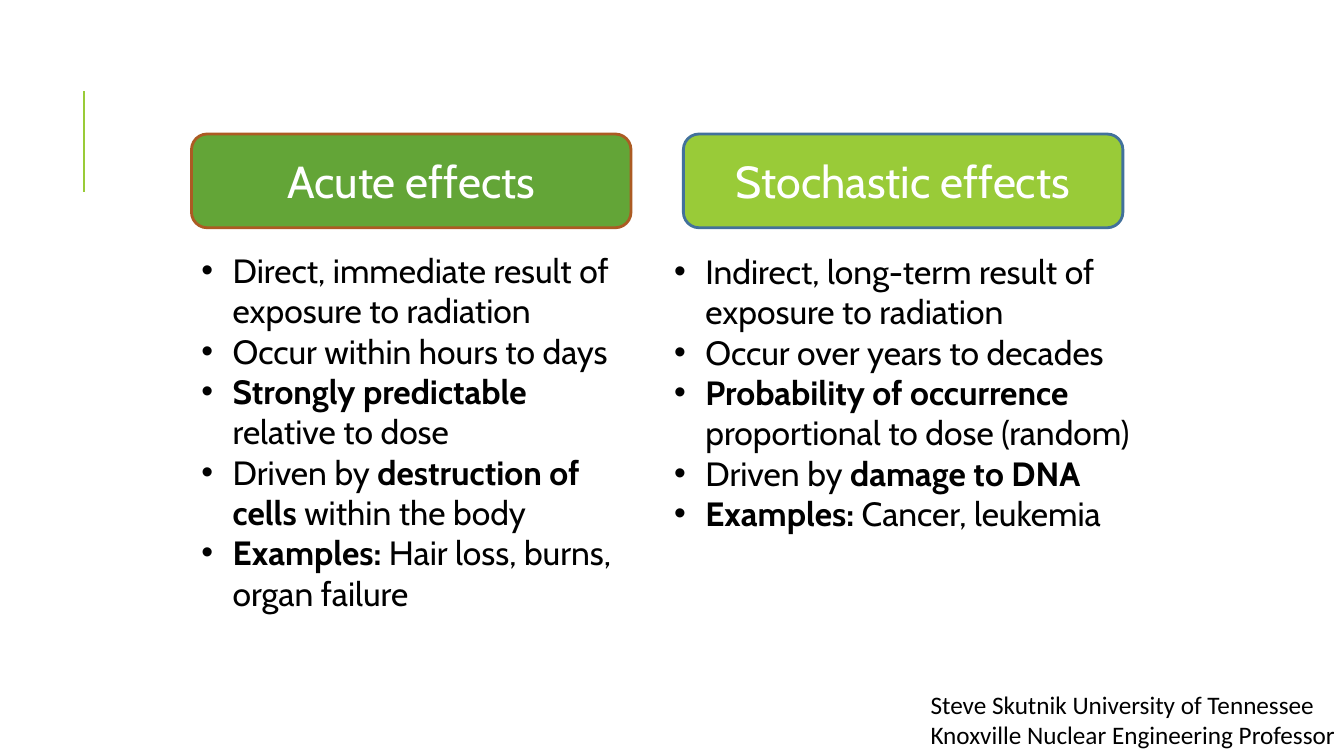
from dataclasses import dataclass

from lxml.etree import SubElement
from pptx import Presentation
from pptx.dml.color import RGBColor as RGB
from pptx.enum.shapes import MSO_CONNECTOR as CONN, MSO_SHAPE as SHAPE
from pptx.enum.text import MSO_ANCHOR as ANCHOR, MSO_AUTO_SIZE as FIT, PP_ALIGN as ALIGN
from pptx.oxml.ns import qn
from pptx.util import Inches, Pt


@dataclass(frozen=True)
class Theme:
    black: RGB = RGB.from_string("000000")
    white: RGB = RGB.from_string("FFFFFF")
    green: RGB = RGB.from_string("63A537")
    lime: RGB = RGB.from_string("99CB38")
    rust: RGB = RGB.from_string("AC5B23")
    blue: RGB = RGB.from_string("42719B")
    body_font: str = "Cabin"
    credit_font: str = "Calibri"
    heading_size: int = 32
    body_size: int = 24
    credit_size: int = 18
    accent_width: float = 1.5
    outline_width: float = 2
    bullet_indent: float = 0.31


def apply(target, values):
    for name, value in values.items():
        setattr(target, name, value)


class Deck:
    COLS, ROWS = 40, 30

    def __init__(self, theme):
        self.theme = theme
        self.prs = Presentation()
        apply(self.prs, {"slide_width": Inches(13.33), "slide_height": Inches(7.5)})
        self.slide = self.prs.slides.add_slide(self.prs.slide_layouts[6])

    def x(self, cols):
        return round(self.prs.slide_width * cols / self.COLS)

    def y(self, rows):
        return round(self.prs.slide_height * rows / self.ROWS)

    def box(self, left, top, width, height):
        return self.x(left), self.y(top), self.x(width), self.y(height)

    def run(self, p, text, font, size, color, bold=False):
        r = p.add_run()
        r.text = text
        apply(r.font, {"name": font, "size": Pt(size), "bold": bold})
        r.font.color.rgb = color

    def accent(self, x, top, bottom):
        line = self.slide.shapes.add_connector(
            CONN.STRAIGHT, self.x(x), self.y(bottom), self.x(x), self.y(top))
        line.line.color.rgb = self.theme.lime
        line.line.width = Pt(self.theme.accent_width)
        SubElement(line._element.spPr, qn("a:effectLst"))

    def heading(self, box, text, fill, outline):
        t = self.theme
        sp = self.slide.shapes.add_shape(SHAPE.ROUNDED_RECTANGLE, *self.box(*box))
        sp.shadow.inherit = False
        sp.fill.solid()
        sp.fill.fore_color.rgb = fill
        sp.line.color.rgb = outline
        sp.line.width = Pt(t.outline_width)
        tf = sp.text_frame
        apply(tf, {"word_wrap": True, "vertical_anchor": ANCHOR.MIDDLE})
        p = tf.paragraphs[0]
        p.alignment = ALIGN.CENTER
        self.run(p, text, t.body_font, t.heading_size, t.white)

    def text_frame(self, box):
        tf = self.slide.shapes.add_textbox(*self.box(*box)).text_frame
        apply(tf, {"word_wrap": True, "auto_size": FIT.SHAPE_TO_FIT_TEXT})
        return tf

    def bullet(self, p):
        indent = Inches(self.theme.bullet_indent)
        pPr = p._p.get_or_add_pPr()
        pPr.set("marL", str(indent))
        pPr.set("indent", str(-indent))
        color = SubElement(pPr, qn("a:buClr"))
        SubElement(color, qn("a:srgbClr"), val=str(self.theme.black))
        SubElement(pPr, qn("a:buFont"), typeface="Arial")
        SubElement(pPr, qn("a:buChar"), char="•")

    def bullets(self, box, items):
        t = self.theme
        tf = self.text_frame(box)
        for i, item in enumerate(items):
            p = tf.add_paragraph() if i else tf.paragraphs[0]
            self.bullet(p)
            for text, bold in item:
                self.run(p, text, t.body_font, t.body_size, t.black, bold)

    def credit(self, box, text):
        t = self.theme
        p = self.text_frame(box).paragraphs[0]
        self.run(p, text, t.credit_font, t.credit_size, t.black)


def main():
    theme = Theme()
    deck = Deck(theme)
    deck.accent(2.49, 3.6, 7.6)

    acute = [
        [("Direct, immediate result of exposure to radiation", False)],
        [("Occur within hours to days", False)],
        [("Strongly predictable ", True), ("relative to dose", False)],
        [("Driven by ", False), ("destruction of cells ", True), ("within the body", False)],
        [("Examples: ", True), ("Hair loss, burns, organ failure", False)],
    ]
    stochastic = [
        [("Indirect, long-term result of exposure to radiation", False)],
        [("Occur over years to decades", False)],
        [("Probability of occurrence ", True), ("proportional to dose (random)", False)],
        [("Driven by ", False), ("damage to DNA", True)],
        [("Examples: ", True), ("Cancer, leukemia", False)],
    ]
    columns = [
        (5.7, "Acute effects", theme.green, theme.rust, (5.7, 9.72, 12.81, 14.96), acute),
        (20.34, "Stochastic effects", theme.lime, theme.blue,
         (19.77, 9.76, 14.52, 11.72), stochastic),
    ]
    for left, title, fill, outline, body, items in columns:
        deck.heading((left, 5.32, 13.08, 3.72), title, fill, outline)
        deck.bullets(body, items)

    deck.credit((27.4, 27.16, 13.8, 2.84),
                "Steve Skutnik University of Tennessee Knoxville Nuclear Engineering Professor")
    deck.prs.save("out.pptx")


if __name__ == "__main__":
    main()
